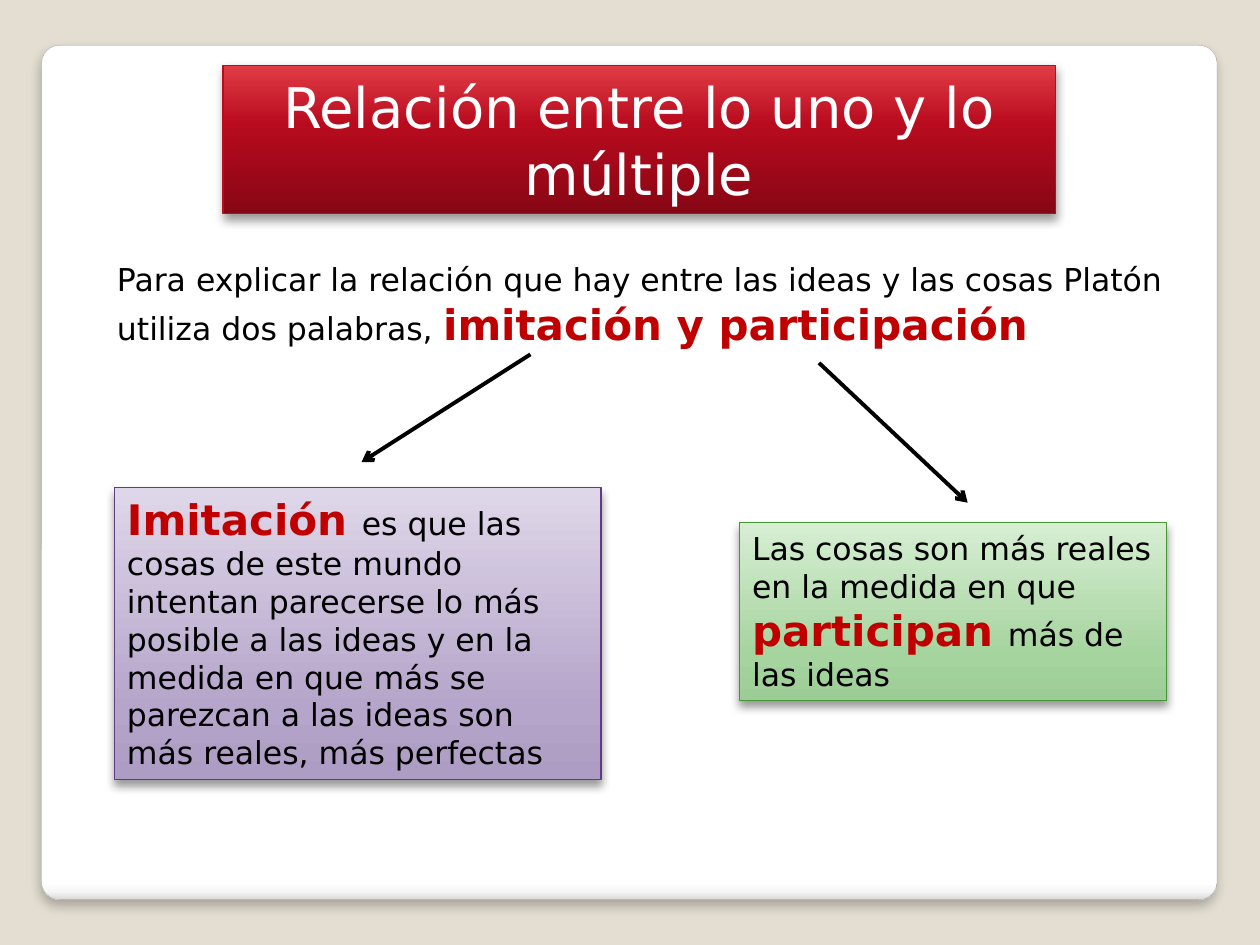
"""Build a slide on Plato's imitation and participation, the one and the many."""
import dataclasses

import pptx
import pptx.dml.color
import pptx.enum.shapes
import pptx.enum.text
import pptx.oxml
import pptx.oxml.ns
import pptx.util

WIDTH, HEIGHT = 10, 7.5


@dataclasses.dataclass(frozen=True)
class Theme:
    font: str = "DejaVu Sans"
    title_size: int = 32
    key_size: int = 24
    body_size: int = 18
    background: str = "E3DED1"
    text: str = "000000"
    title_text: str = "FFFFFF"
    key: str = "C00000"
    card: tuple = ((0, "FFFFFF"), (98, "FFFFFF"), (99, "F7F7F7"), (100, "DADADA"))
    card_line: str = "A4A4A4"
    red: tuple = ((0, "870614"), (60, "B80B1E"), (100, "E13C45"))
    red_line: str = "BC0B1F"
    purple: tuple = ((0, "AD9CC3"), (25, "B5A5CA"), (100, "DFD7E9"))
    purple_line: str = "603C84"
    green: tuple = ((0, "9DCD96"), (25, "A5D49E"), (100, "D7EED3"))
    green_line: str = "439631"
    card_shadow: tuple = (25, 6, 4)
    box_shadow: tuple = (40, 5.2, 3)


THEME = Theme()
STYLES = {
    "title": (THEME.title_size, THEME.title_text, False),
    "body": (THEME.body_size, THEME.text, False),
    "key": (THEME.key_size, THEME.key, True),
}

CARD = (0.033, 0.048, 0.933, 0.904)
TITLE = ((0.177, 0.069, 0.661, 0.157), [("title", "Relación entre lo uno y lo múltiple")])
INTRO = ((0.083, 0.269, 0.858, 0.108), [
    ("body", "Para explicar la relación que hay entre las ideas y las cosas Platón utiliza dos palabras, "),
    ("key", "imitación y participación"),
])
BOXES = [
    ((0.091, 0.516, 0.386, 0.309), THEME.purple, THEME.purple_line, [
        ("key", "Imitación "),
        ("body", "es que las cosas de este mundo intentan parecerse lo más posible a las ideas "
                 "y en la medida en que más se parezcan a las ideas son más reales, más perfectas"),
    ]),
    ((0.587, 0.553, 0.339, 0.188), THEME.green, THEME.green_line, [
        ("body", "Las cosas son más reales en la medida en que "),
        ("key", "participan "),
        ("body", "más de las ideas"),
    ]),
]
ARROWS = [(0.421, 0.375, 0.287, 0.489), (0.65, 0.384, 0.768, 0.532)]


def to_lengths(shares):
    return [pptx.util.Inches(share * side) for share, side in zip(shares, (WIDTH, HEIGHT) * 2)]


def color(value):
    return pptx.dml.color.RGBColor.from_string(value)


def add_xml(parent, tag, **attributes):
    element = pptx.oxml.parse_xml(f"<a:{tag} {pptx.oxml.ns.nsdecls('a')}/>")
    for name, value in attributes.items():
        element.set(name, str(value))
    parent.append(element)
    return element


def decorate(shape, stops, angle, line, line_width, shadow):
    shape.fill.gradient()
    shape.fill.gradient_angle = angle
    properties = shape._element.spPr
    stop_list = properties.find(".//" + pptx.oxml.ns.qn("a:gsLst"))
    for old_stop in list(stop_list):
        stop_list.remove(old_stop)
    for position, value in stops:
        add_xml(add_xml(stop_list, "gs", pos=position * 1000), "srgbClr", val=value)
    shape.line.color.rgb = color(line)
    shape.line.width = pptx.util.Pt(line_width)
    shape.shadow.inherit = False
    opacity, blur, distance = shadow
    outer = add_xml(properties.find(pptx.oxml.ns.qn("a:effectLst")), "outerShdw",
                    blurRad=pptx.util.Pt(blur), dist=pptx.util.Pt(distance),
                    dir=5400000, rotWithShape=0)
    add_xml(add_xml(outer, "srgbClr", val="000000"), "alpha", val=opacity * 1000)


def write(shape, runs, alignment=pptx.enum.text.PP_ALIGN.LEFT,
          anchor=pptx.enum.text.MSO_ANCHOR.TOP):
    frame = shape.text_frame
    frame.word_wrap = True
    frame.auto_size = pptx.enum.text.MSO_AUTO_SIZE.NONE
    frame.vertical_anchor = anchor
    paragraph = frame.paragraphs[0]
    paragraph.alignment = alignment
    for style, text in runs:
        run = paragraph.add_run()
        run.text = text
        size, value, bold = STYLES[style]
        run.font.name = THEME.font
        run.font.size = pptx.util.Pt(size)
        run.font.bold = bold
        run.font.color.rgb = color(value)


def add_arrow(slide, ends):
    arrow = slide.shapes.add_connector(pptx.enum.shapes.MSO_CONNECTOR.STRAIGHT, *to_lengths(ends))
    arrow.line.color.rgb = color(THEME.text)
    arrow.line.width = pptx.util.Pt(2.25)
    add_xml(arrow.line._get_or_add_ln(), "tailEnd", type="arrow")
    add_xml(arrow._element.spPr, "effectLst")


def main():
    presentation = pptx.Presentation()
    presentation.slide_width = pptx.util.Inches(WIDTH)
    presentation.slide_height = pptx.util.Inches(HEIGHT)
    slide = presentation.slides.add_slide(presentation.slide_layouts[5])
    slide.background.fill.solid()
    slide.background.fill.fore_color.rgb = color(THEME.background)
    shapes = slide.shapes
    kinds = pptx.enum.shapes.MSO_SHAPE

    card = shapes.add_shape(kinds.ROUNDED_RECTANGLE, *to_lengths(CARD))
    card.adjustments[0] = 0.021
    decorate(card, THEME.card, 270, THEME.card_line, 0.16, THEME.card_shadow)

    title = shapes.title
    card._element.addnext(title._element)
    place, runs = TITLE
    title.left, title.top, title.width, title.height = to_lengths(place)
    decorate(title, THEME.red, 90, THEME.red_line, 0.75, THEME.box_shadow)
    write(title, runs, pptx.enum.text.PP_ALIGN.CENTER, pptx.enum.text.MSO_ANCHOR.MIDDLE)

    place, runs = INTRO
    write(shapes.add_textbox(*to_lengths(place)), runs)

    for place, stops, line, runs in BOXES:
        box = shapes.add_shape(kinds.RECTANGLE, *to_lengths(place))
        decorate(box, stops, 90, line, 0.75, THEME.box_shadow)
        write(box, runs)

    for ends in ARROWS:
        add_arrow(slide, ends)
    presentation.save("out.pptx")


if __name__ == "__main__":
    main()
